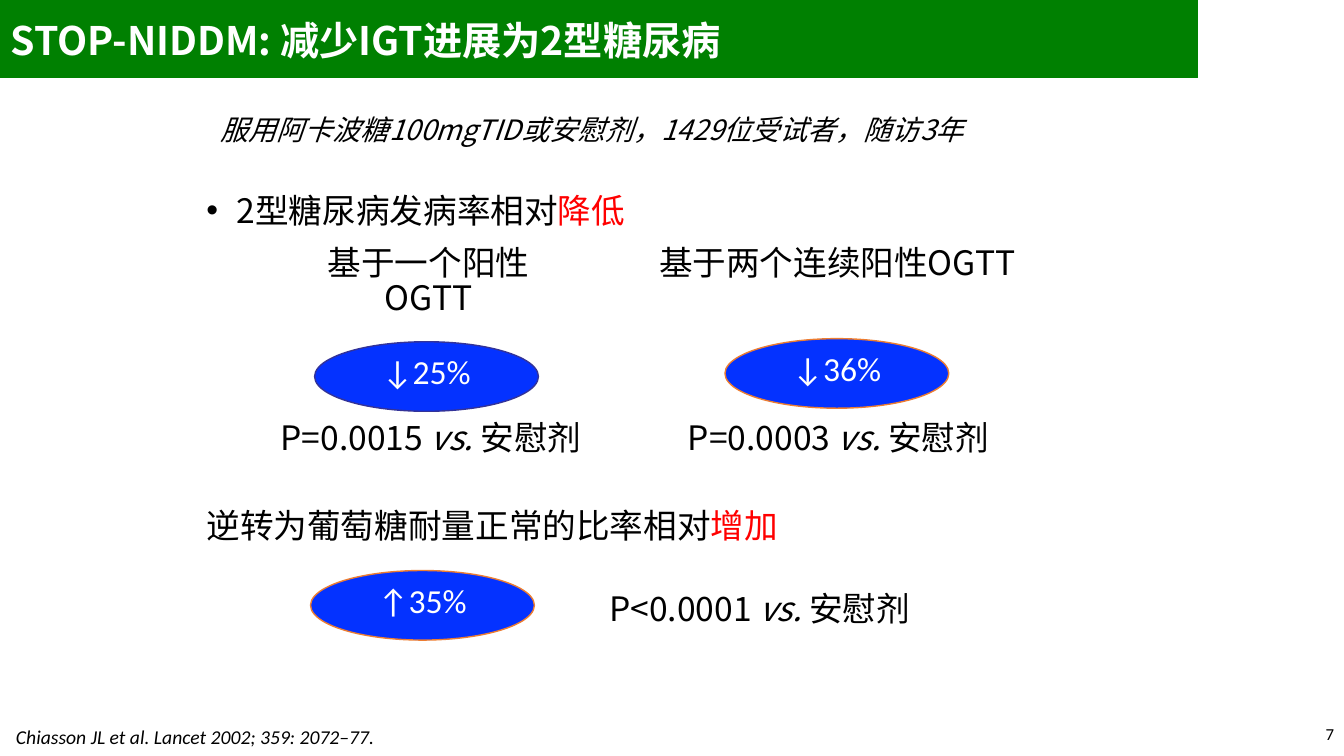
from dataclasses import dataclass

from lxml import etree
from pptx import Presentation
from pptx.dml.color import RGBColor
from pptx.enum.shapes import MSO_SHAPE
from pptx.enum.text import MSO_ANCHOR, PP_ALIGN
from pptx.oxml.ns import qn
from pptx.util import Inches, Pt

RECTANGLE, OVAL = MSO_SHAPE.RECTANGLE, MSO_SHAPE.OVAL
LEFT, CENTER, RIGHT = PP_ALIGN.LEFT, PP_ALIGN.CENTER, PP_ALIGN.RIGHT
TOP, MIDDLE = MSO_ANCHOR.TOP, MSO_ANCHOR.MIDDLE

BLACK = RGBColor(0x00, 0x00, 0x00)
WHITE = RGBColor(0xFF, 0xFF, 0xFF)
RED = RGBColor(0xFF, 0x00, 0x00)
GREEN = RGBColor(0x00, 0x80, 0x01)
BLUE = RGBColor(0x04, 0x32, 0xFF)
ORANGE = RGBColor(0xED, 0x7D, 0x31)
INDIGO = RGBColor(0x33, 0x33, 0x99)

CHINESE_FONT = "Noto Sans CJK SC"
LATIN_FONT = "Calibri"
OVAL_WIDTH, OVAL_HEIGHT, OVAL_INSET = 2.22, 0.69, 0.1


@dataclass(frozen=True)
class Run:
    text: str
    color: RGBColor = BLACK
    bold: bool = False
    italic: bool = False


@dataclass(frozen=True)
class Label:
    left: float
    top: float
    width: float
    height: float
    runs: tuple[Run, ...]
    size: int = 24
    font: str = CHINESE_FONT
    alignment: PP_ALIGN = LEFT
    anchor: MSO_ANCHOR = TOP
    wrap: bool = True
    bullet: bool = False
    line_spacing: float = 0.86


@dataclass(frozen=True)
class Change:
    left: float
    top: float
    text: str
    outline: RGBColor


def p_value(left: float, top: float, width: float, value: str) -> Label:
    runs = (Run(f"{value} "), Run("vs. ", italic=True), Run("安慰剂"))
    return Label(left, top, width, 0.5, runs, alignment=CENTER)


LABELS = (
    Label(12.68, 7.06, 0.65, 0.44, (Run("7"),), size=12, font=LATIN_FONT,
          alignment=RIGHT, anchor=MIDDLE, line_spacing=1.0),
    Label(0.01, 0.14, 13.32, 0.57,
          (Run("STOP-NIDDM: 减少IGT进展为2型糖尿病", WHITE, bold=True),),
          size=28, anchor=MIDDLE, line_spacing=0.9),
    Label(0.06, 7.14, 3.79, 0.34,
          (Run("Chiasson JL et al. Lancet 2002; 359: 2072–77.", italic=True),),
          size=14, font=LATIN_FONT, wrap=False, line_spacing=1.0),
    Label(2.09, 1.12, 7.63, 0.44,
          (Run("服用阿卡波糖100mgTID或安慰剂，1429位受试者，随访3年", italic=True),),
          size=20),
    Label(1.95, 1.89, 8.67, 0.5,
          (Run("2型糖尿病发病率相对"), Run("降低", RED)), bullet=True),
    Label(2.85, 2.41, 2.8, 0.5, (Run("基于一个阳性OGTT"),), alignment=CENTER),
    Label(6.14, 2.41, 4.33, 0.5, (Run("基于两个连续阳性OGTT"),), alignment=CENTER),
    p_value(2.55, 4.15, 3.45, "P=0.0015"),
    p_value(6.59, 4.15, 3.45, "P=0.0003"),
    Label(1.95, 5.02, 9.91, 0.5,
          (Run("逆转为葡萄糖耐量正常的比率相对"), Run("增加", RED))),
    p_value(5.3, 5.84, 4.47, "P<0.0001"),
)

CHANGES = (
    Change(3.12, 3.39, "↓25%", INDIGO),
    Change(7.19, 3.36, "↓36%", ORANGE),
    Change(3.08, 5.66, "↑35%", ORANGE),
)


def add_bullet(paragraph) -> None:
    properties = paragraph._p.get_or_add_pPr()
    properties.set("marL", str(Inches(0.3)))
    properties.set("indent", str(-Inches(0.3)))
    color = etree.SubElement(properties, qn("a:buClr"))
    etree.SubElement(color, qn("a:srgbClr"), val=str(BLACK))
    etree.SubElement(properties, qn("a:buFont"), typeface="Arial")
    etree.SubElement(properties, qn("a:buChar"), char="•")


def add_filled_shape(slide, kind: MSO_SHAPE, left: float, top: float, width: float,
                     height: float, fill: RGBColor, outline: RGBColor) -> None:
    shape = slide.shapes.add_shape(
        kind, Inches(left), Inches(top), Inches(width), Inches(height))
    shape.shadow.inherit = False
    shape.fill.solid()
    shape.fill.fore_color.rgb = fill
    shape.line.color.rgb = outline
    shape.line.width = Pt(1)


def add_label(slide, label: Label) -> None:
    box = slide.shapes.add_textbox(
        Inches(label.left), Inches(label.top), Inches(label.width), Inches(label.height))
    frame = box.text_frame
    frame.word_wrap = label.wrap
    frame.vertical_anchor = label.anchor
    paragraph = frame.paragraphs[0]
    if label.bullet:
        add_bullet(paragraph)
    paragraph.alignment = label.alignment
    paragraph.line_spacing = label.line_spacing
    for part in label.runs:
        run = paragraph.add_run()
        run.text = part.text
        run.font.color.rgb = part.color
        formats = {"name": label.font, "size": Pt(label.size),
                   "bold": part.bold, "italic": part.italic}
        for attribute, value in formats.items():
            setattr(run.font, attribute, value)
        etree.SubElement(run._r.get_or_add_rPr(), qn("a:ea"), typeface=CHINESE_FONT)


def add_change(slide, change: Change) -> None:
    add_filled_shape(slide, OVAL, change.left, change.top,
                     OVAL_WIDTH, OVAL_HEIGHT, BLUE, change.outline)
    add_label(slide, Label(
        change.left + OVAL_INSET, change.top + OVAL_INSET,
        OVAL_WIDTH - 2 * OVAL_INSET, 0.5, (Run(change.text, WHITE),),
        font=LATIN_FONT, alignment=CENTER))


def main() -> None:
    presentation = Presentation()
    presentation.slide_width = Inches(13.33)
    presentation.slide_height = Inches(7.5)
    slide = presentation.slides.add_slide(presentation.slide_layouts[6])
    add_filled_shape(slide, RECTANGLE, 0, 0, 11.88, 0.77, GREEN, GREEN)
    for label in LABELS:
        add_label(slide, label)
    for change in CHANGES:
        add_change(slide, change)
    presentation.save("out.pptx")


if __name__ == "__main__":
    main()
